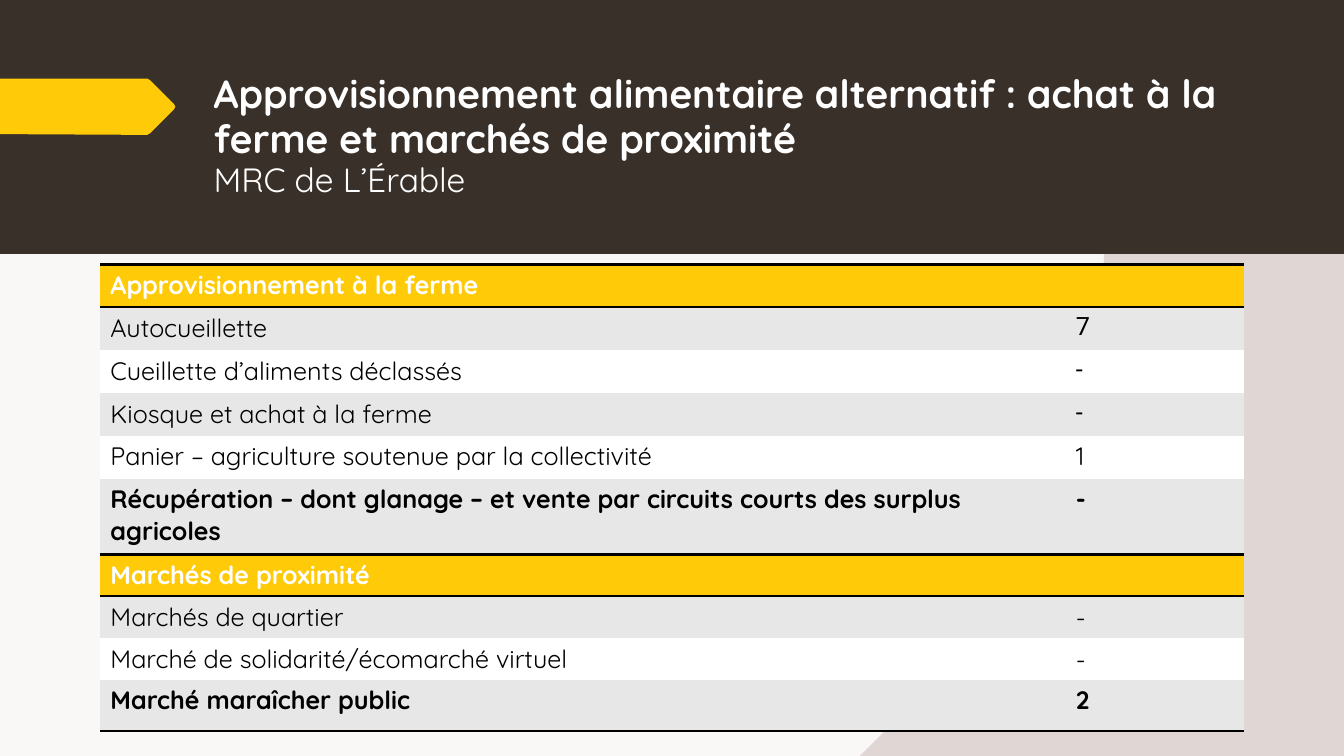
"""Build the slide on farm purchases and local markets in the MRC de L’Érable."""
from lxml.etree import SubElement
from pptx import Presentation
from pptx.dml.color import RGBColor
from pptx.enum.shapes import MSO_SHAPE
from pptx.enum.text import MSO_ANCHOR, MSO_AUTO_SIZE, PP_ALIGN
from pptx.oxml import parse_xml
from pptx.oxml.ns import nsdecls, qn
from pptx.util import Cm, Pt

COLOURS = {
    "background": "F9F8F7",
    "panel": "E0D6D4",
    "band": "39302A",
    "accent": "FFCA08",
    "stripe": "E7E7E7",
    "white": "FFFFFF",
    "black": "000000",
}
NO_STYLE = "{2D5ABB26-0587-4C30-8999-92F81FD0307C}"


def paint(shape, colour):
    shape.shadow.inherit = False
    shape.fill.solid()
    shape.fill.fore_color.rgb = RGBColor.from_string(COLOURS[colour])
    shape.line.fill.background()


def write(paragraph, text, colour, **font_values):
    run = paragraph.add_run()
    run.text = text
    run.font.color.rgb = RGBColor.from_string(COLOURS[colour])
    for name, value in font_values.items():
        setattr(run.font, name, value)


presentation = Presentation()
presentation.slide_width = Cm(33.87)
presentation.slide_height = Cm(19.05)
slide = presentation.slides.add_slide(presentation.slide_layouts[5])
slide.background.fill.solid()
slide.background.fill.fore_color.rgb = RGBColor.from_string(COLOURS["background"])

outlines = {
    "panel": [(27.82, 6.3), (33.87, 6.3), (33.87, 19.05), (21.67, 19.05), (27.82, 12.9)],
    "accent": [(0, 1.98), (3.71, 1.98), (3.78, 2.02), (4.39, 2.63), (4.42, 2.69),
               (4.39, 2.75), (3.78, 3.36), (3.71, 3.4), (0, 3.38)],
}
for colour, points in outlines.items():
    corners = [(Cm(x), Cm(y)) for x, y in points]
    builder = slide.shapes.build_freeform(*corners[0])
    builder.add_line_segments(corners[1:], close=True)
    paint(builder.convert_to_shape(), colour)
    if colour == "panel":
        band = slide.shapes.add_shape(MSO_SHAPE.RECTANGLE, 0, 0, Cm(33.87), Cm(6.4))
        paint(band, "band")

title = slide.shapes.title
slide.shapes._spTree.append(title._element)
title_box = {"left": Cm(5.13), "top": Cm(1.42), "width": Cm(26.06), "height": Cm(4.04)}
for name, value in title_box.items():
    setattr(title, name, value)
frame_values = {
    "auto_size": MSO_AUTO_SIZE.NONE,
    "word_wrap": True,
    "vertical_anchor": MSO_ANCHOR.MIDDLE,
}
for name, value in frame_values.items():
    setattr(title.text_frame, name, value)
paragraph = title.text_frame.paragraphs[0]
paragraph.alignment = PP_ALIGN.LEFT
paragraph.line_spacing = 0.95
write(paragraph, "Approvisionnement alimentaire alternatif : achat à la ferme et marchés de proximité",
      "white", name="Quicksand", size=Pt(28), bold=True)
paragraph.add_line_break()
write(paragraph, "MRC de L’Érable", "white", name="Quicksand", size=Pt(24), bold=False)

farm_rows = [
    ("Approvisionnement à la ferme", ""),
    ("Autocueillette", "7"),
    ("Cueillette d’aliments déclassés", "-"),
    ("Kiosque et achat à la ferme", "-"),
    ("Panier – agriculture soutenue par la collectivité", "1"),
    ("Récupération – dont glanage – et vente par circuits courts des surplus agricoles", "-"),
]
market_rows = [
    ("Marchés de proximité", ""),
    ("Marchés de quartier", "-"),
    ("Marché de solidarité/écomarché virtuel", "-"),
    ("Marché maraîcher public", "2"),
]
tables = [
    (farm_rows, 6.66, 1.08, 1.91, {1, 2, 3}),
    (market_rows, 13.97, 1.04, 1.3, set()),
]
for rows, top, row_height, last_height, roboto_rows in tables:
    last = len(rows) - 1
    total_height = row_height * last + last_height
    frame = slide.shapes.add_table(len(rows), 2, Cm(2.53), Cm(top), Cm(28.82), Cm(total_height))
    table = frame.table
    table._tbl.tblPr.find(qn("a:tableStyleId")).text = NO_STYLE
    for column, width in zip(table.columns, (24.33, 4.49)):
        column.width = Cm(width)
    for row_index, texts in enumerate(rows):
        header = row_index == 0
        table.rows[row_index].height = Cm(last_height if row_index == last else row_height)
        fill = "accent" if header else "stripe" if row_index % 2 else "white"
        edges = ("lnT", "lnB") if header else ("lnB",) if row_index == last else ()
        for column_index, text in enumerate(texts):
            cell = table.cell(row_index, column_index)
            font_name = "Roboto" if column_index and row_index in roboto_rows else "Quicksand"
            paragraph = cell.text_frame.paragraphs[0]
            paragraph.font.size = Pt(18)
            if text:
                write(paragraph, text, "white" if header else "black", name=font_name,
                      size=Pt(18), bold=row_index in (0, last))
            cell.fill.solid()
            cell.fill.fore_color.rgb = RGBColor.from_string(COLOURS[fill])
            for position, edge in enumerate(edges):
                border = parse_xml(f'<a:{edge} {nsdecls("a")} w="{Pt(2)}"/>')
                solid = SubElement(border, qn("a:solidFill"))
                SubElement(solid, qn("a:srgbClr"), val=COLOURS["black"])
                cell._tc.get_or_add_tcPr().insert(position, border)

presentation.save("out.pptx")
